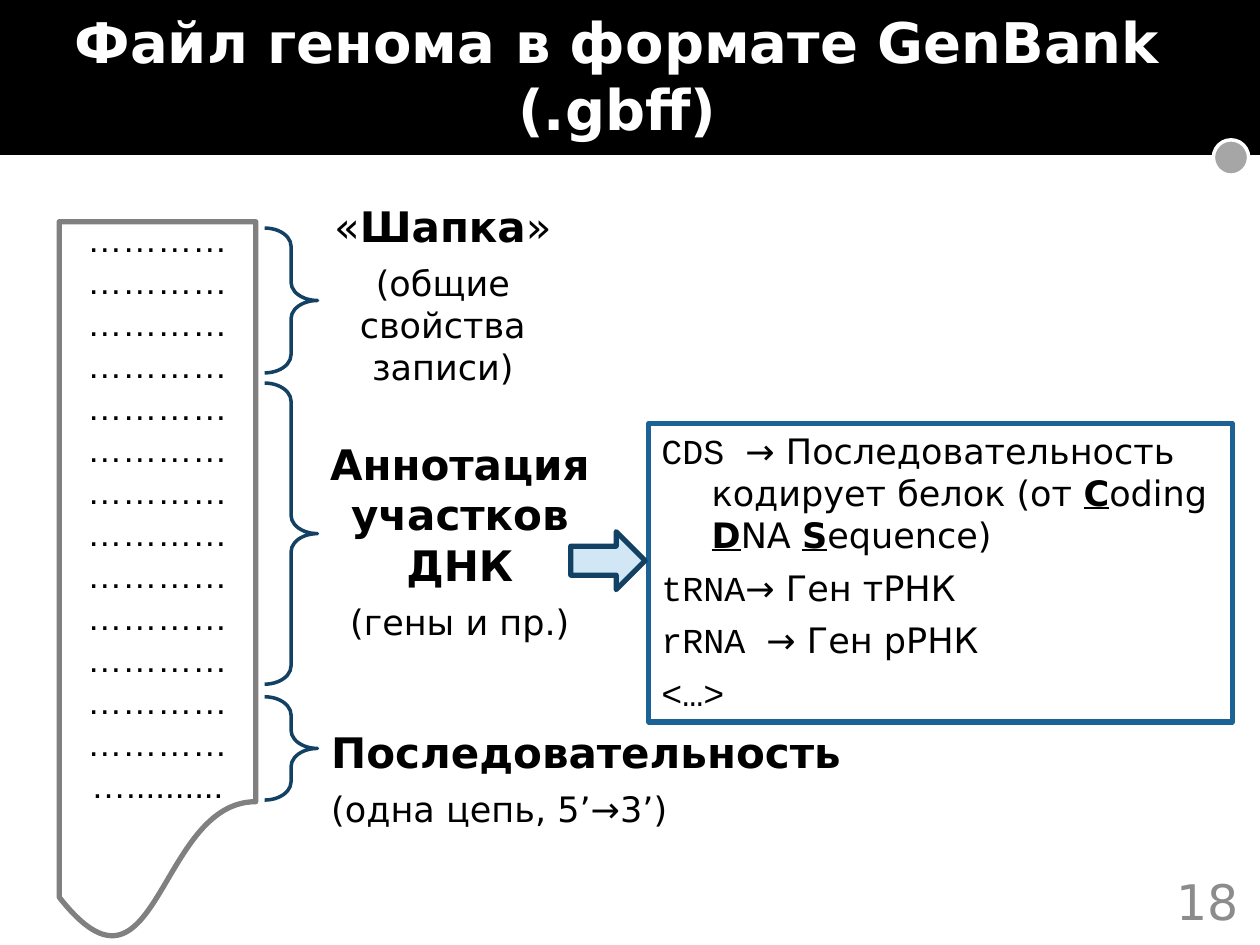
from dataclasses import dataclass

from lxml import etree
from pptx import Presentation
from pptx import util as u
from pptx.dml.color import RGBColor
from pptx.enum import shapes, text
from pptx.oxml import ns

Inches, Pt = u.Inches, u.Pt
Kind = shapes.MSO_SHAPE
Align = text.PP_ALIGN
Anchor = text.MSO_ANCHOR


@dataclass(frozen=True)
class Theme:
    black: str = "000000"
    white: str = "FFFFFF"
    dot: str = "A6A6A6"
    number: str = "8C8C8C"
    sheet: str = "808080"
    navy: str = "134163"
    blue: str = "1D6294"
    pale: str = "D1E7F6"
    sans: str = "DejaVu Sans"
    mono: str = "Courier New"
    plain: str = "Arial"
    title_size: int = 32
    number_size: int = 28
    heading_size: int = 24
    body_size: int = 20


THEME = Theme()


def lengths(box):
    return [Inches(value) for value in box]


def add_run(paragraph, words, size=THEME.body_size, color=THEME.black,
            font=THEME.sans, bold=False, underline=False):
    run = paragraph.add_run()
    run.text = words
    run.font.name = font
    run.font.size = Pt(size)
    run.font.bold = bold
    run.font.underline = underline
    run.font.color.rgb = RGBColor.from_string(color)


def add_shape(slide, kind, box, fill=None, line=None, width=2):
    shape = slide.shapes.add_shape(kind, *lengths(box))
    shape.shadow.inherit = False
    if fill:
        shape.fill.solid()
        shape.fill.fore_color.rgb = RGBColor.from_string(fill)
    else:
        shape.fill.background()
    if line:
        shape.line.color.rgb = RGBColor.from_string(line)
        shape.line.width = Pt(width)
    else:
        shape.line.fill.background()
    return shape


def add_text_frame(slide, box):
    frame = slide.shapes.add_textbox(*lengths(box)).text_frame
    frame.word_wrap = True
    return frame


def fill_paragraphs(frame, paragraphs, align=Align.LEFT, hanging=0):
    for index, runs in enumerate(paragraphs):
        paragraph = frame.add_paragraph() if index else frame.paragraphs[0]
        paragraph.alignment = align
        paragraph.space_after = Pt(6)
        if hanging:
            properties = paragraph._p.get_or_add_pPr()
            properties.set("marL", str(Inches(hanging)))
            properties.set("indent", str(-Inches(hanging)))
        for words, style in runs:
            add_run(paragraph, words, **style)


def add_header(slide, box, title):
    left, top, width, height = box
    add_shape(slide, Kind.RECTANGLE, box, fill=THEME.black)
    rule_y = Inches(top + height + 0.02)
    rule = slide.shapes.add_connector(
        shapes.MSO_CONNECTOR.STRAIGHT,
        Inches(left), rule_y, Inches(left + width - 0.33), rule_y)
    rule.line.color.rgb = RGBColor.from_string(THEME.white)
    rule.line.width = Pt(2)
    etree.SubElement(rule._element.spPr, ns.qn("a:effectLst"))
    add_shape(slide, Kind.OVAL,
              (left + width - 0.37, top + height - 0.12, 0.28, 0.28),
              fill=THEME.dot, line=THEME.white)

    heading = slide.shapes.title
    heading.left, heading.top, heading.width, heading.height = lengths(
        (left + 0.04, top, width - 0.28, height - 0.05))
    slide.shapes._spTree.append(heading._element)
    frame = heading.text_frame
    frame.word_wrap = True
    frame.auto_size = text.MSO_AUTO_SIZE.NONE
    frame.vertical_anchor = Anchor.MIDDLE
    paragraph = frame.paragraphs[0]
    paragraph.alignment = Align.CENTER
    add_run(paragraph, title, THEME.title_size, THEME.white, bold=True)


def add_slide_number(slide, box, number):
    frame = add_text_frame(slide, box)
    frame.vertical_anchor = Anchor.MIDDLE
    paragraph = frame.paragraphs[0]
    paragraph.alignment = Align.RIGHT
    add_run(paragraph, number, THEME.number_size, THEME.number)


def add_genome_file(slide, box):
    sheet = add_shape(slide, Kind.FLOWCHART_DOCUMENT, box,
                      line=THEME.sheet, width=3)
    sheet.text_frame.word_wrap = True
    paragraph = sheet.text_frame.paragraphs[0]
    paragraph.alignment = Align.CENTER
    add_run(paragraph, "…" * 53 + "." * 10, font=THEME.plain)


def add_section(slide, brace_box, label_box, paragraphs, align):
    brace = add_shape(slide, Kind.RIGHT_BRACE, brace_box, line=THEME.navy)
    brace.adjustments[0] = 0.345
    brace.adjustments[1] = 0.5
    fill_paragraphs(add_text_frame(slide, label_box), paragraphs, align)


def add_feature_panel(slide, box, paragraphs):
    left, top, _, _ = box
    panel = add_shape(slide, Kind.RECTANGLE, box, line=THEME.blue, width=3)
    panel.text_frame.word_wrap = True
    panel.text_frame.vertical_anchor = Anchor.TOP
    fill_paragraphs(panel.text_frame, paragraphs, hanging=0.4)
    add_shape(slide, Kind.RIGHT_ARROW, (left - 0.62, top + 0.86, 0.59, 0.46),
              fill=THEME.pale, line=THEME.navy, width=3)


def main():
    presentation = Presentation()
    presentation.slide_width, presentation.slide_height = lengths((10, 7.5))
    slide = presentation.slides.add_slide(presentation.slide_layouts[5])

    add_header(slide, (0, 0, 10, 1.23), "Файл генома в формате GenBank (.gbff)")
    add_slide_number(slide, (7.6, 6.95, 2.33, 0.4), "18")
    add_genome_file(slide, (0.47, 1.76, 1.56, 5.74))

    heading = {"size": THEME.heading_size}
    strong = {**heading, "bold": True}
    body = {}
    sections = [
        (1.81, 1.15, (2.5, 1.54, 2.03, 1.6), Align.CENTER,
         [[("«", heading), ("Шапка", strong), ("»", heading)],
          [("(общие свойства записи)", body)]]),
        (3.04, 2.39, (2.46, 3.43, 2.38, 1.73), Align.CENTER,
         [[("Аннотация участков ДНК", strong)], [("(гены и пр.)", body)]]),
        (5.53, 0.82, (2.53, 5.72, 4.28, 0.93), Align.LEFT,
         [[("Последовательность", strong)], [("(одна цепь, 5’→3’)", body)]]),
    ]
    for top, height, label_box, align, paragraphs in sections:
        add_section(slide, (2.1, top, 0.42, height), label_box,
                    paragraphs, align)

    code = {"font": THEME.mono}
    initial = {"bold": True, "underline": True}
    add_feature_panel(slide, (5.15, 3.36, 4.63, 2.37), [
        [("CDS ", code),
         ("→ Последовательность кодирует белок (от ", body),
         ("C", initial), ("oding ", body), ("D", initial), ("NA ", body),
         ("S", initial), ("equence)", body)],
        [("tRNA", code), ("→ Ген тРНК", body)],
        [("rRNA ", code), ("→ Ген рРНК", body)],
        [("<…>", code)],
    ])
    presentation.save("out.pptx")


if __name__ == "__main__":
    main()
